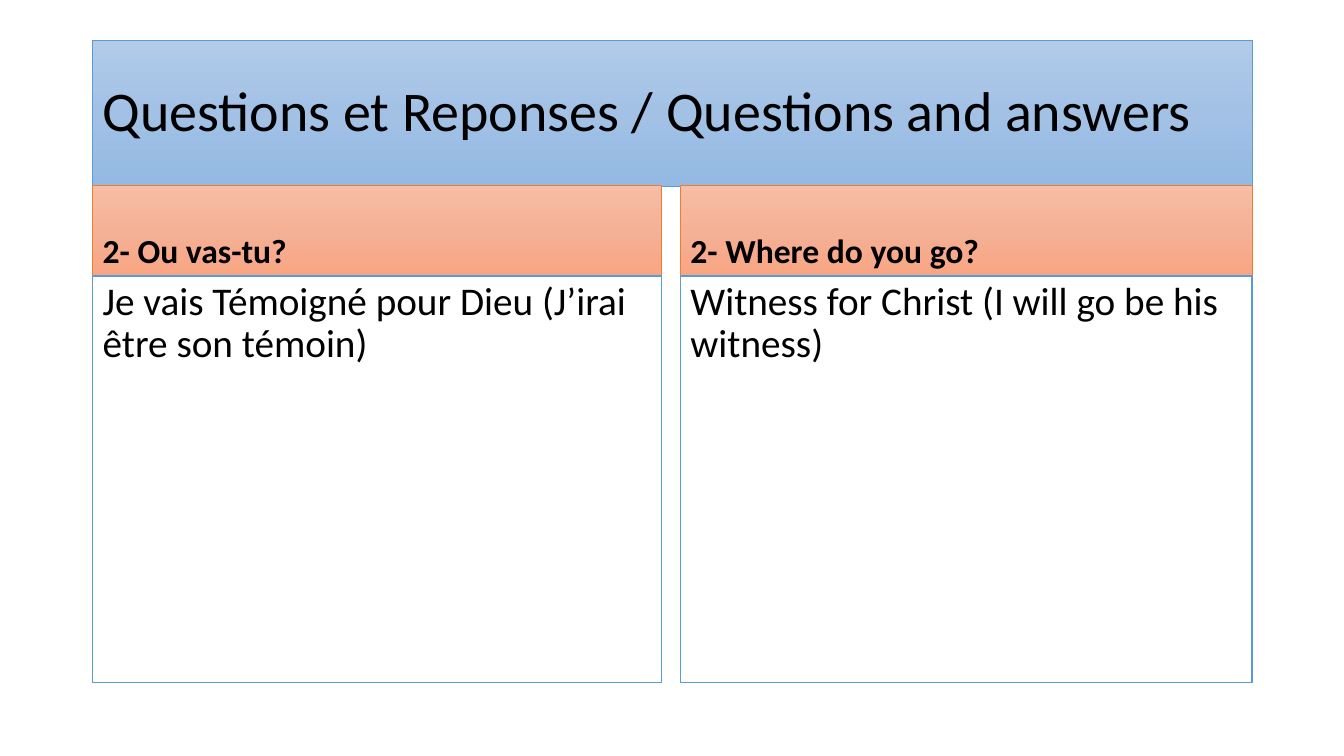
from copy import deepcopy
from pptx import Presentation
from pptx.dml.color import RGBColor
from pptx.enum.shapes import MSO_SHAPE
from pptx.enum.text import MSO_ANCHOR, PP_ALIGN
from pptx.oxml.ns import qn
from pptx.util import Inches, Pt

BLACK = RGBColor(0x00, 0x00, 0x00)
WHITE = RGBColor(0xFF, 0xFF, 0xFF)
BLUE = RGBColor(0x5B, 0x9B, 0xD5)
ORANGE = RGBColor(0xED, 0x7D, 0x31)
BLUES = [RGBColor(0xB1, 0xCB, 0xE9), RGBColor(0xA3, 0xC1, 0xE5), RGBColor(0x93, 0xB9, 0xE4)]
ORANGES = [RGBColor(0xF7, 0xBD, 0xA5), RGBColor(0xF5, 0xB1, 0x96), RGBColor(0xF8, 0xA5, 0x82)]


def shade(shape, colors):
    fill = shape.fill
    fill.gradient()
    fill.gradient_angle = 270
    stops = shape._element.spPr.find(qn("a:gradFill")).find(qn("a:gsLst"))
    stops.insert(1, deepcopy(stops[0]))
    for stop, color, place in zip(fill.gradient_stops, colors, (0, 0.5, 1)):
        stop.color.rgb = color
        stop.position = place


def panel(slide, box, text, size, colors, edge, width, anchor, bold=False, before=10):
    shape = slide.shapes.add_shape(MSO_SHAPE.RECTANGLE, *map(Inches, box))
    shape.shadow.inherit = False
    if len(colors) > 1:
        shade(shape, colors)
    else:
        shape.fill.solid()
        shape.fill.fore_color.rgb = colors[0]
    shape.line.color.rgb = edge
    shape.line.width = Pt(width)
    frame = shape.text_frame
    frame.word_wrap = True
    frame.vertical_anchor = anchor
    para = frame.paragraphs[0]
    para.alignment = PP_ALIGN.LEFT
    para.line_spacing = 0.9
    para.space_before = Pt(before)
    run = para.add_run()
    run.text = text
    run.font.name = "Calibri"
    run.font.size = Pt(size)
    run.font.bold = bold
    run.font.color.rgb = BLACK


def banner(slide, box, text):
    panel(slide, box, text, 40, BLUES, BLUE, 0.5, MSO_ANCHOR.MIDDLE, before=0)


def column(slide, box, question, answer):
    left, top, width, height = box
    head = 0.9
    panel(slide, (left, top, width, head), question, 24, ORANGES, ORANGE, 0.5,
          MSO_ANCHOR.BOTTOM, bold=True)
    panel(slide, (left, top + head, width, height - head), answer, 28, [WHITE], BLUE, 1,
          MSO_ANCHOR.TOP)


def main():
    deck = Presentation()
    deck.slide_width = Inches(13.33)
    deck.slide_height = Inches(7.5)
    slide = deck.slides.add_slide(deck.slide_layouts[6])
    banner(slide, (0.92, 0.4, 11.5, 1.45), "Questions et Reponses / Questions and answers")
    column(slide, (0.92, 1.84, 5.64, 4.93), "2- Ou vas-tu?",
           "Je vais Témoigné pour Dieu (J’irai être son témoin)")
    column(slide, (6.75, 1.84, 5.67, 4.93), "2- Where do you go?",
           "Witness for Christ (I will go be his witness)")
    deck.save("out.pptx")


if __name__ == "__main__":
    main()
